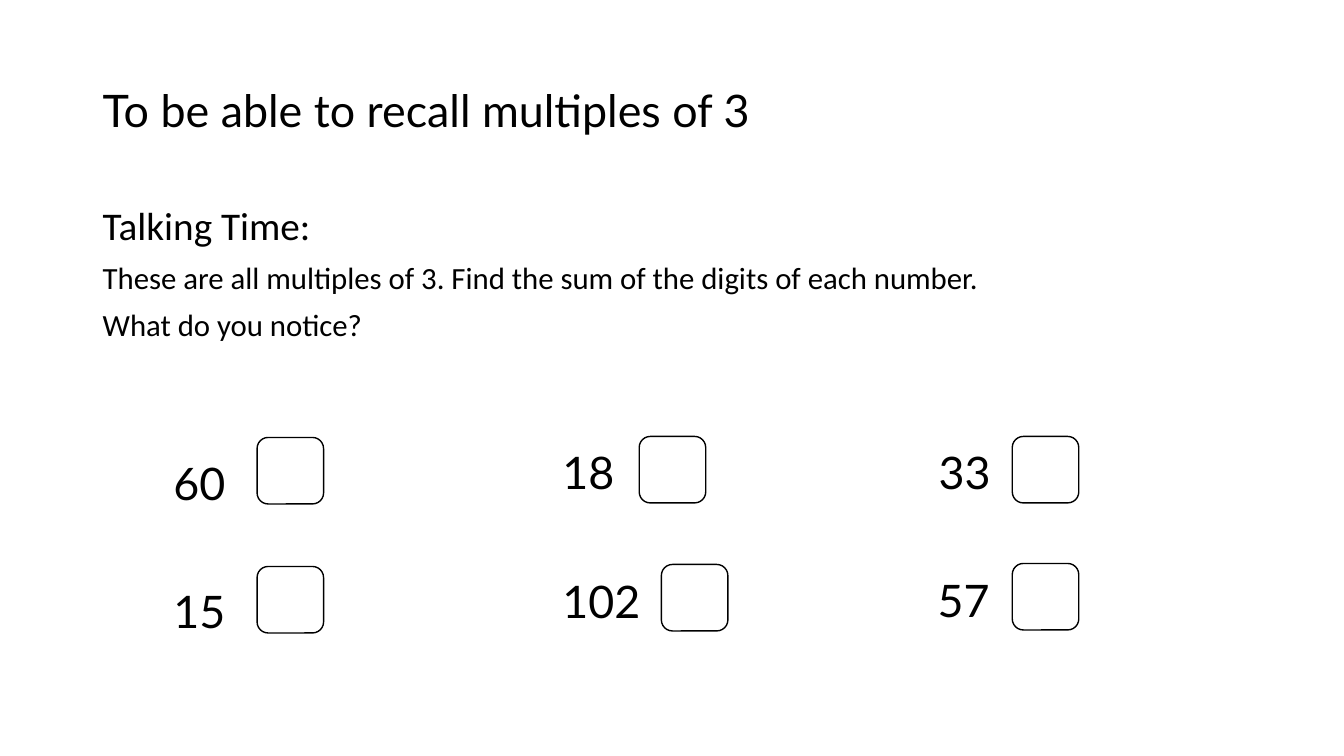
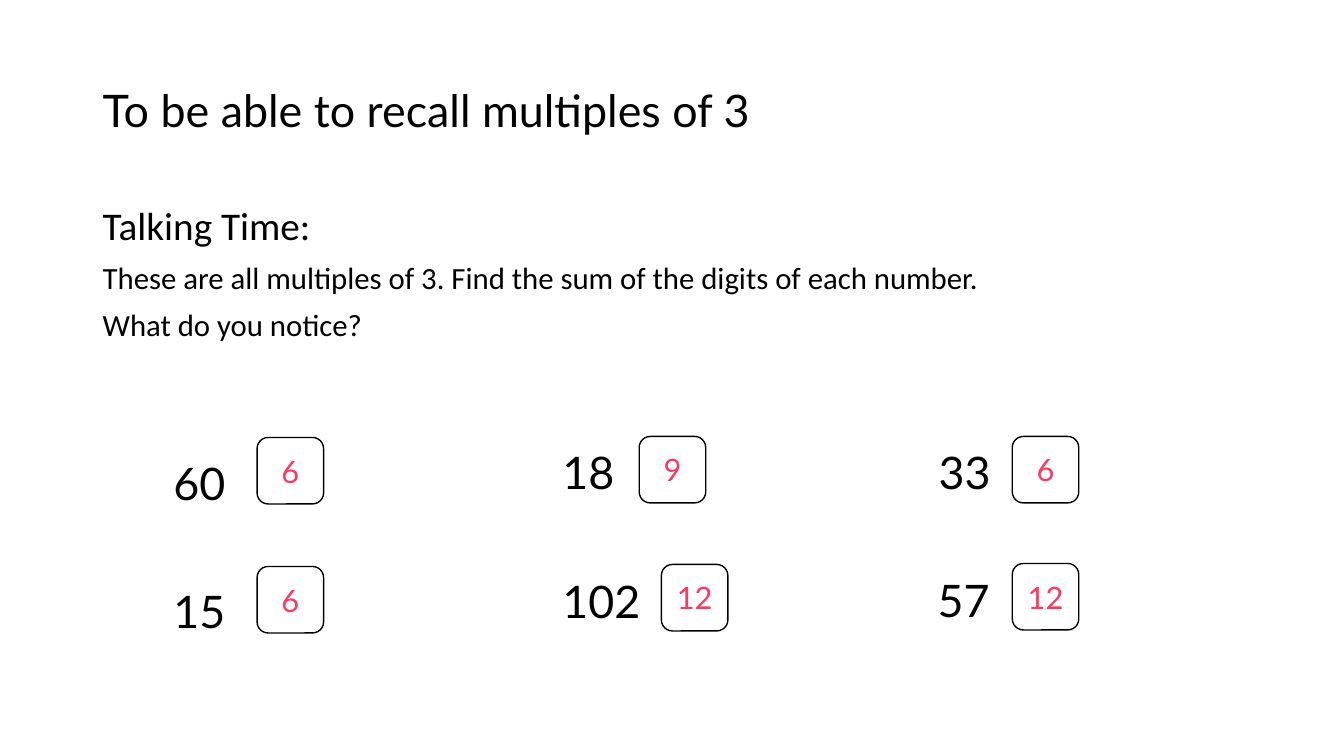
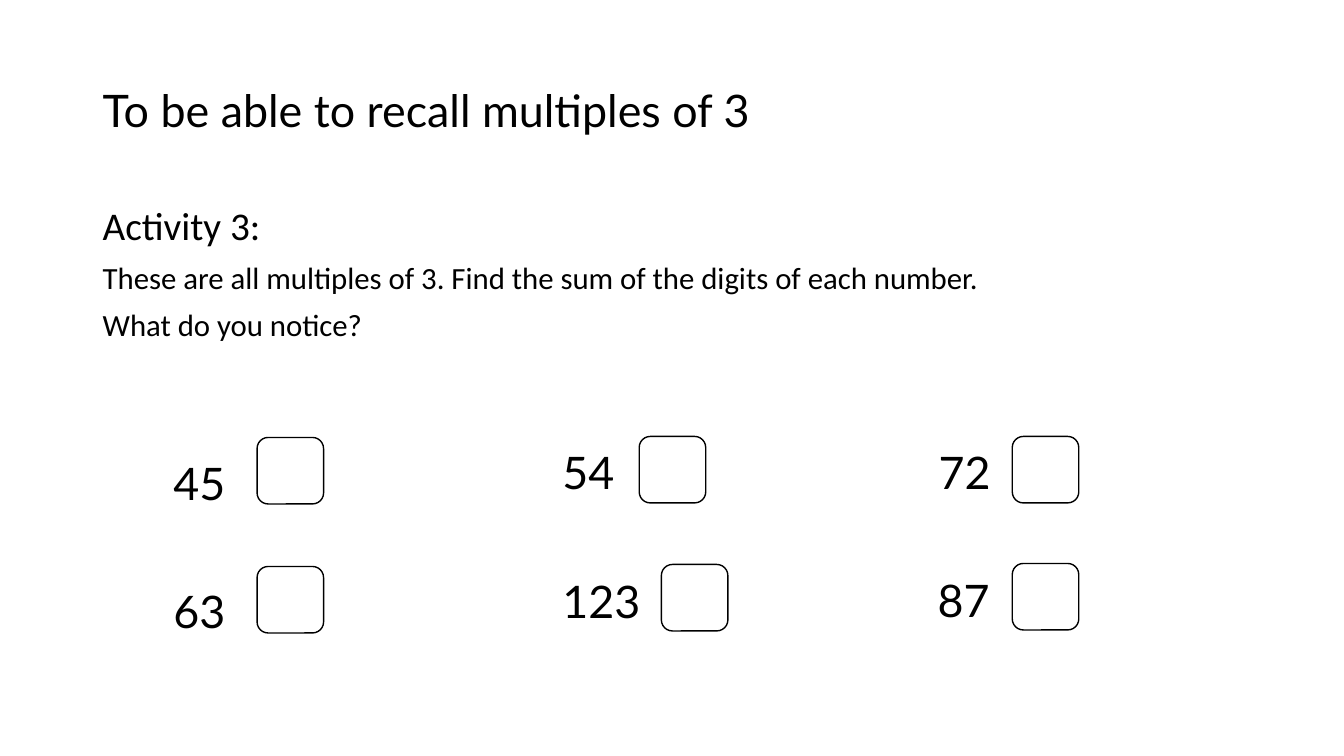
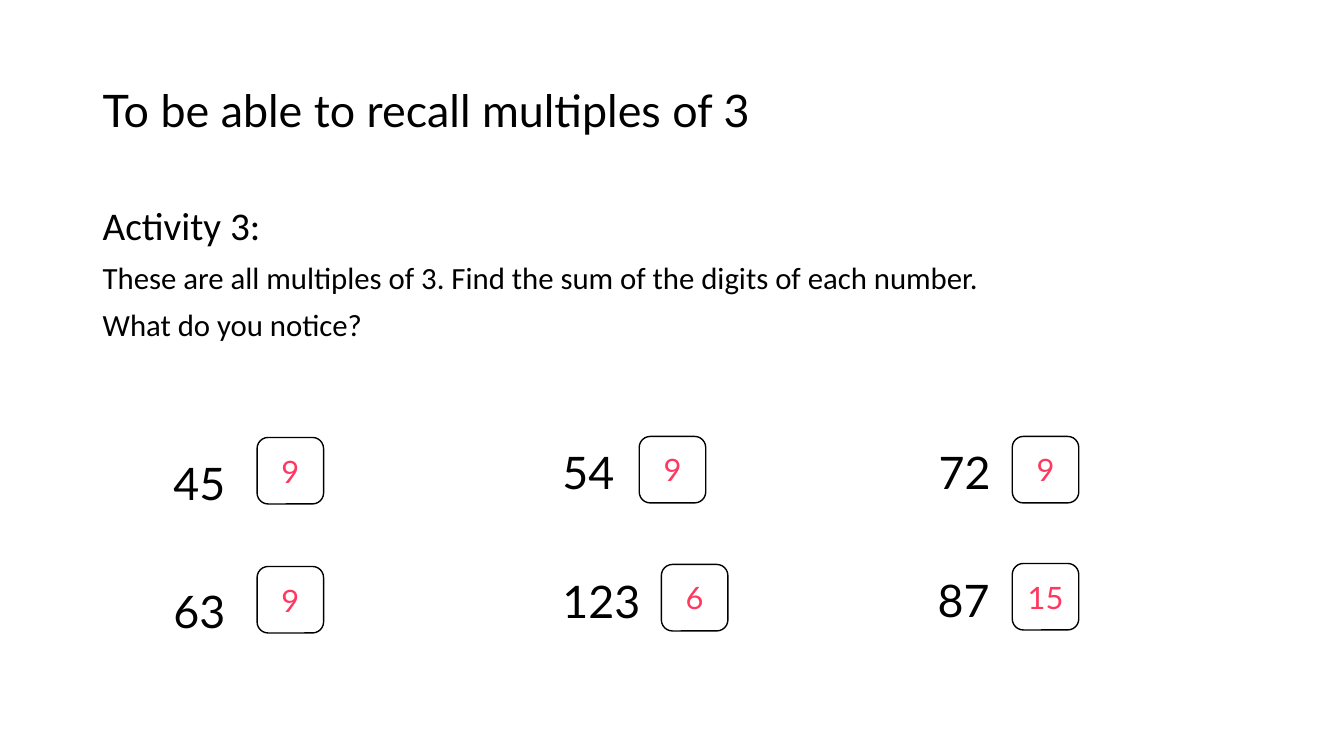
from dataclasses import dataclass

from pptx import Presentation
from pptx.dml.color import RGBColor
from pptx.enum.shapes import MSO_SHAPE
from pptx.enum.text import MSO_ANCHOR, MSO_AUTO_SIZE, PP_ALIGN
from pptx.shapes.autoshape import Shape
from pptx.slide import Slide
from pptx.text.text import _Paragraph as Paragraph
from pptx.util import Emu, Pt

EMU_PER_PX = 9144
BLANK_LAYOUT = 6
PAGE_WIDTH, PAGE_HEIGHT = 1333, 750
NUMBER_HEIGHT = 64
TILE_SIDE = 66
TITLE = "To be able to recall multiples of 3"
INSTRUCTIONS = (
    "These are all multiples of 3. Find the sum of the digits of each number.",
    "What do you notice?",
)


@dataclass(frozen=True)
class Theme:
    ink: RGBColor = RGBColor(0x00, 0x00, 0x00)
    paper: RGBColor = RGBColor(0xFF, 0xFF, 0xFF)
    answer: RGBColor = RGBColor(0xFF, 0x38, 0x60)
    display_font: str = "Lato"
    body_font: str = "Calibri"
    title_size: int = 32
    heading_size: int = 28
    text_size: int = 22
    line_spacing: float = 0.9
    space_before: int = 10
    outline: int = 1


@dataclass(frozen=True)
class Area:
    left: int
    top: int
    width: int
    height: int


@dataclass(frozen=True)
class Slot:
    number: Area
    tile: Area


@dataclass(frozen=True)
class Question:
    number: str
    answer: str


@dataclass(frozen=True)
class Exercise:
    heading: str
    questions: tuple[Question, ...]


THEME = Theme()
TITLE_AREA = Area(92, 40, 960, 145)
BODY_AREA = Area(92, 200, 1150, 476)


def make_slot(left: int, top: int, tile_left: int, tile_top: int, width: int = 79) -> Slot:
    return Slot(
        Area(left, top, width, NUMBER_HEIGHT),
        Area(tile_left, tile_top, TILE_SIDE, TILE_SIDE),
    )


SLOTS = (
    make_slot(162, 447, 255, 434),
    make_slot(548, 436, 634, 433),
    make_slot(921, 436, 1004, 433),
    make_slot(162, 574, 255, 562),
    make_slot(548, 564, 656, 560, 105),
    make_slot(920, 563, 1004, 559),
)

EXERCISES = (
    Exercise(
        "Talking Time:",
        (
            Question("60", "6"), Question("18", "9"), Question("33", "6"),
            Question("15", "6"), Question("102", "12"), Question("57", "12"),
        ),
    ),
    Exercise(
        "Activity 3:",
        (
            Question("45", "9"), Question("54", "9"), Question("72", "9"),
            Question("63", "9"), Question("123", "6"), Question("87", "15"),
        ),
    ),
)


def px(length: int) -> Emu:
    return Emu(length * EMU_PER_PX)


def bounds(area: Area) -> tuple[Emu, Emu, Emu, Emu]:
    return px(area.left), px(area.top), px(area.width), px(area.height)


def add_span(para: Paragraph, text: str, size: int, font: str = THEME.display_font,
             color: RGBColor = THEME.ink) -> None:
    span = para.add_run()
    span.text = text
    span.font.size = Pt(size)
    span.font.name = font
    span.font.color.rgb = color


def add_box(page: Slide, area: Area) -> Shape:
    box = page.shapes.add_textbox(*bounds(area))
    box.text_frame.word_wrap = True
    return box


def add_title(page: Slide) -> None:
    frame = add_box(page, TITLE_AREA).text_frame
    frame.vertical_anchor = MSO_ANCHOR.MIDDLE
    para = frame.paragraphs[0]
    para.line_spacing = THEME.line_spacing
    add_span(para, TITLE, THEME.title_size)


def add_body(page: Slide, heading: str) -> None:
    frame = add_box(page, BODY_AREA).text_frame
    para = frame.paragraphs[0]
    para.line_spacing = THEME.line_spacing
    add_span(para, heading, THEME.heading_size, THEME.body_font)
    for instruction in INSTRUCTIONS:
        para = frame.add_paragraph()
        para.line_spacing = THEME.line_spacing
        para.space_before = Pt(THEME.space_before)
        add_span(para, instruction, THEME.text_size, THEME.body_font)


def add_number(page: Slide, area: Area, number: str) -> None:
    frame = add_box(page, area).text_frame
    frame.auto_size = MSO_AUTO_SIZE.SHAPE_TO_FIT_TEXT
    add_span(frame.paragraphs[0], number, THEME.title_size)


def add_tile(page: Slide, area: Area) -> Shape:
    tile = page.shapes.add_shape(MSO_SHAPE.ROUNDED_RECTANGLE, *bounds(area))
    tile.shadow.inherit = False
    tile.fill.solid()
    tile.fill.fore_color.rgb = THEME.paper
    tile.line.color.rgb = THEME.ink
    tile.line.width = Pt(THEME.outline)
    return tile


def add_answer(tile: Shape, answer: str) -> None:
    frame = tile.text_frame
    frame.vertical_anchor = MSO_ANCHOR.MIDDLE
    para = frame.paragraphs[0]
    para.alignment = PP_ALIGN.CENTER
    add_span(para, answer, THEME.text_size, color=THEME.answer)


def draw_exercise(page: Slide, exercise: Exercise, answered: bool) -> None:
    add_title(page)
    add_body(page, exercise.heading)
    for slot, question in zip(SLOTS, exercise.questions):
        add_number(page, slot.number, question.number)
        tile = add_tile(page, slot.tile)
        if answered:
            add_answer(tile, question.answer)


def main() -> None:
    deck = Presentation()
    deck.slide_width, deck.slide_height = px(PAGE_WIDTH), px(PAGE_HEIGHT)
    for exercise in EXERCISES:
        for answered in (False, True):
            page = deck.slides.add_slide(deck.slide_layouts[BLANK_LAYOUT])
            draw_exercise(page, exercise, answered)
    deck.save("out.pptx")


if __name__ == "__main__":
    main()
